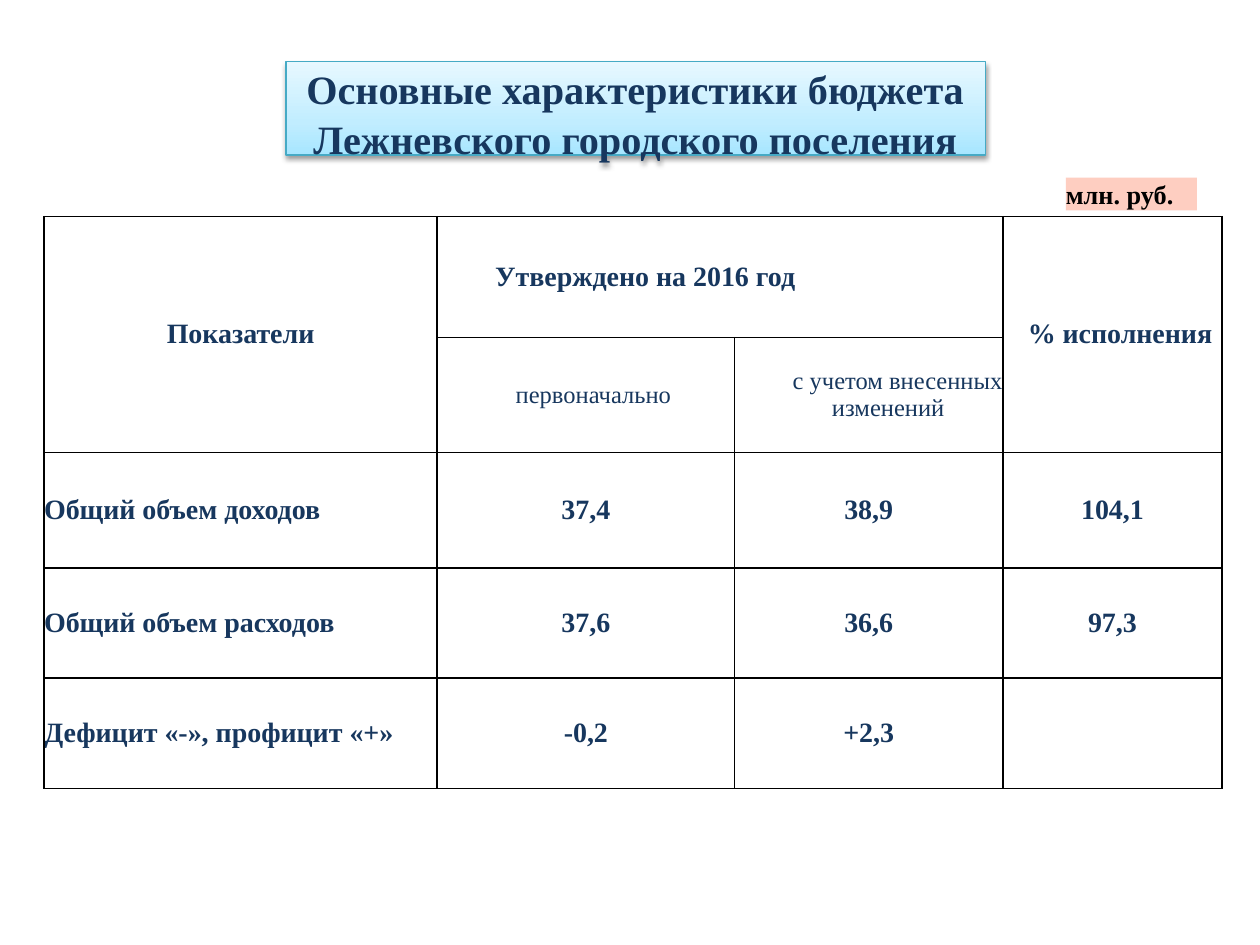
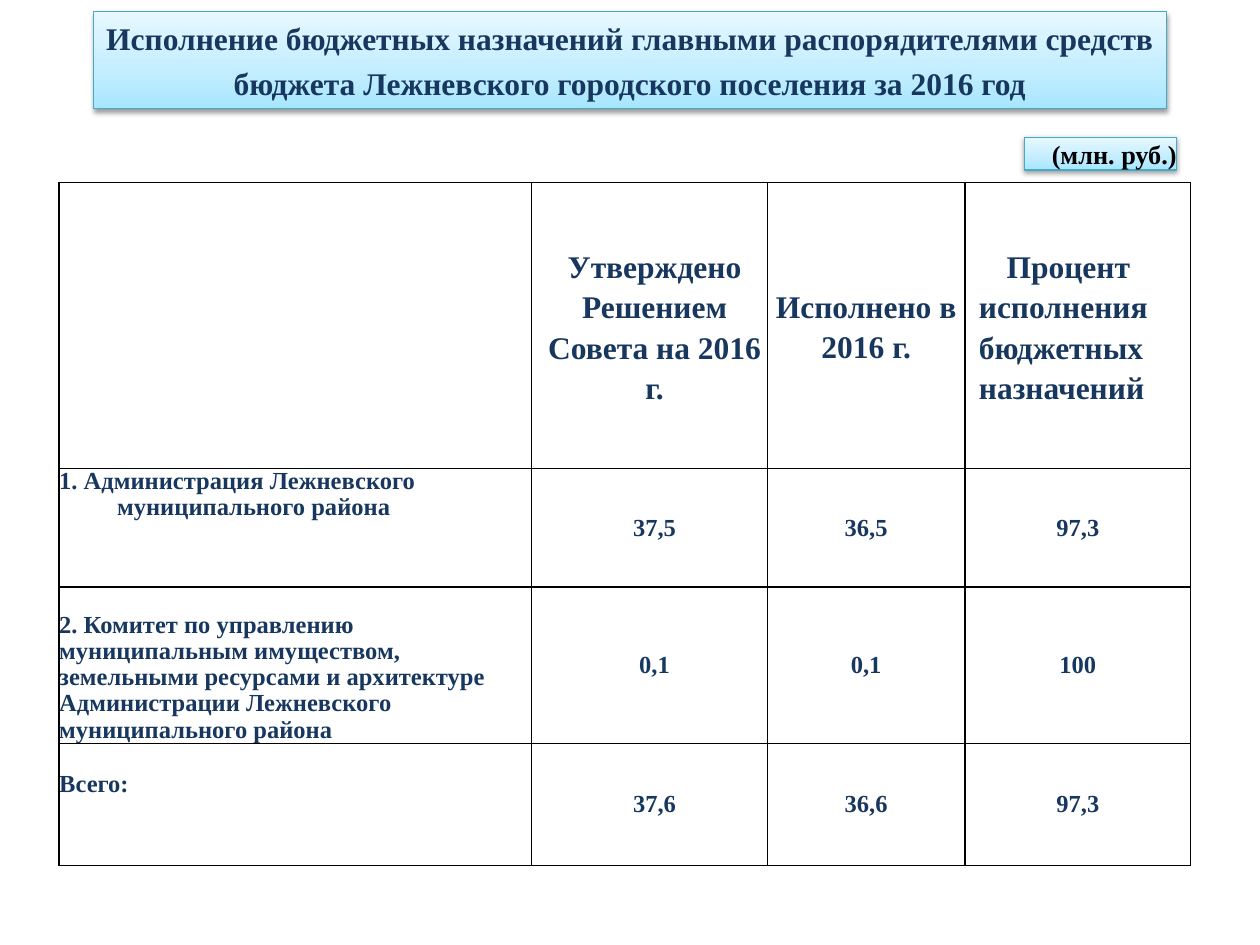
from lxml import etree
from pptx import Presentation
from pptx import util as u
from pptx.dml.color import RGBColor
from pptx.enum import shapes, text
from pptx.oxml.ns import qn

NAVY = RGBColor(0x17, 0x37, 0x5E)
BLACK = RGBColor(0, 0, 0)
PEACH = RGBColor(0xFE, 0xCE, 0xC1)
TEAL = RGBColor(0x46, 0xAA, 0xC5)
SKY_STOPS = [(0, RGBColor(0xA7, 0xE6, 0xFF)),
             (35, RGBColor(0xC1, 0xED, 0xFF)),
             (100, RGBColor(0xE7, 0xF8, 0xFF))]
FONT = "Times New Roman"
LEFT, CENTER, RIGHT = text.PP_ALIGN.LEFT, text.PP_ALIGN.CENTER, text.PP_ALIGN.RIGHT
TOP, MIDDLE, BOTTOM = (text.MSO_ANCHOR.TOP, text.MSO_ANCHOR.MIDDLE,
                       text.MSO_ANCHOR.BOTTOM)


def add_node(parent, tag, **attributes):
    node = etree.SubElement(parent, qn(tag))
    for key, value in attributes.items():
        node.set(key, str(value))
    return node


def write(paragraph, words, size, color=NAVY, bold=True, align=LEFT,
          leading=None, indent=(0, 0)):
    """Fill one paragraph; indent is (left margin, first line) in inches."""
    paragraph.alignment = align
    if leading:
        paragraph.line_spacing = u.Pt(leading)
    if any(indent):
        properties = paragraph._p.get_or_add_pPr()
        properties.set("marL", str(u.Inches(indent[0])))
        properties.set("indent", str(u.Inches(indent[1])))
    run = paragraph.add_run()
    run.text = words
    run.font.name = FONT
    run.font.size = u.Pt(size)
    run.font.bold = bold
    run.font.color.rgb = color


def clear_margins(holder):
    holder.margin_left = holder.margin_right = 0
    holder.margin_top = holder.margin_bottom = 0


def prepare_frame(shape, anchor):
    frame = shape.text_frame
    frame.word_wrap = True
    frame.auto_size = text.MSO_AUTO_SIZE.NONE
    frame.vertical_anchor = anchor
    clear_margins(frame)
    return frame.paragraphs[0]


def style_sky_panel(shape):
    """Sky gradient, thin teal outline and soft shadow below."""
    properties = shape._element.spPr
    gradient = add_node(properties, "a:gradFill", rotWithShape=1)
    stops = add_node(gradient, "a:gsLst")
    for percent, color in SKY_STOPS:
        stop = add_node(stops, "a:gs", pos=percent * 1000)
        add_node(stop, "a:srgbClr", val=color)
    add_node(gradient, "a:lin", ang=270 * 60000, scaled=0)
    shape.line.color.rgb = TEAL
    shape.line.width = u.Pt(0.75)
    effects = add_node(properties, "a:effectLst")
    shadow = add_node(effects, "a:outerShdw", blurRad=u.Pt(3.1), dist=u.Pt(1.6),
                      dir=90 * 60000, rotWithShape=0)
    add_node(add_node(shadow, "a:srgbClr", val=BLACK), "a:alpha", val=38000)


def add_title(slide, words, box, size, leading):
    title = slide.shapes.title
    title.left, title.top, title.width, title.height = map(u.Inches, box)
    style_sky_panel(title)
    write(prepare_frame(title, TOP), words, size, align=CENTER, leading=leading)


def add_unit_label(slide, words, box, align, flat_fill=None):
    label = slide.shapes.add_shape(shapes.MSO_SHAPE.RECTANGLE, *map(u.Inches, box))
    if flat_fill is None:
        style_sky_panel(label)
    else:
        label.shadow.inherit = False
        label.fill.solid()
        label.fill.fore_color.rgb = flat_fill
        label.line.fill.background()
    write(prepare_frame(label, MIDDLE), words, 15, BLACK, align=align)


def draw_borders(cell):
    properties = cell._tc.get_or_add_tcPr()
    for index, side in enumerate(("a:lnL", "a:lnR", "a:lnT", "a:lnB")):
        border = add_node(properties, side, w=u.Pt(1))
        add_node(add_node(border, "a:solidFill"), "a:srgbClr", val=BLACK)
        properties.insert(index, border)


def add_grid(slide, left, top, column_widths, row_heights):
    """Unfilled table with black rules and no cell margins."""
    grid = slide.shapes.add_table(
        len(row_heights), len(column_widths), u.Inches(left), u.Inches(top),
        u.Inches(sum(column_widths)), u.Inches(sum(row_heights))).table
    grid.first_row = grid.horz_banding = False
    for column, width in zip(grid.columns, column_widths):
        column.width = u.Inches(width)
    for row, height in zip(grid.rows, row_heights):
        row.height = u.Inches(height)
    for cell in grid.iter_cells():
        clear_margins(cell)
        cell.fill.background()
        draw_borders(cell)
    return grid


def fill_cell(cell, words, size, anchor=MIDDLE, **style):
    cell.vertical_anchor = anchor
    write(cell.text_frame.paragraphs[0], words, size, **style)


def fill_values(grid, first_row, rows, size, first_indent=(0, 0)):
    for r, values in enumerate(rows, first_row):
        for c, value in enumerate(values, 1):
            fill_cell(grid.cell(r, c), value, size, align=CENTER,
                      indent=first_indent if c == 1 else (0, 0))


def build_budget_summary(slide):
    add_title(slide, "Основные характеристики бюджета Лежневского городского поселения",
              (2.27, 0.49, 5.55, 0.74), 23, 28.8)
    add_unit_label(slide, "млн. руб.", (8.46, 1.41, 1.04, 0.26), LEFT, PEACH)
    grid = add_grid(slide, 0.35, 1.72, (3.12, 2.36, 2.13, 1.74),
                    (0.96, 0.91, 0.92, 0.87, 0.88))

    # Two-level header
    for first, last in (((0, 0), (1, 0)), ((0, 1), (0, 2)), ((0, 3), (1, 3))):
        grid.cell(*first).merge(grid.cell(*last))
    fill_cell(grid.cell(0, 0), "Показатели", 16, align=CENTER)
    fill_cell(grid.cell(0, 1), "Утверждено на 2016 год", 16, indent=(0.46, 0))
    fill_cell(grid.cell(0, 3), "% исполнения", 16, align=CENTER, indent=(0.12, 0))
    fill_cell(grid.cell(1, 1), "первоначально", 14, bold=False, align=CENTER,
              indent=(0.12, 0))
    fill_cell(grid.cell(1, 2), "с учетом внесенных изменений", 14, bold=False,
              align=CENTER, indent=(0.31, 0.15))

    # Indicators
    indicators = ("Общий объем доходов", "Общий объем расходов",
                  "Дефицит «-», профицит «+»")
    for r, indicator in enumerate(indicators, 2):
        fill_cell(grid.cell(r, 0), indicator, 16)
    fill_values(grid, 2, [("37,4", "38,9", "104,1"),
                          ("37,6", "36,6", "97,3"),
                          ("-0,2", "+2,3")], 16)


def build_spending_by_manager(slide):
    add_title(slide, "Исполнение бюджетных назначений главными распорядителями средств "
              "бюджета Лежневского городского поселения за 2016 год",
              (0.74, 0.09, 8.52, 0.77), 18, 25.9)
    add_unit_label(slide, "(млн. руб.)", (8.13, 1.09, 1.21, 0.26), RIGHT)
    grid = add_grid(slide, 0.47, 1.45, (3.75, 1.87, 1.57, 1.79),
                    (2.27, 0.94, 1.24, 0.97))

    # Header
    fill_cell(grid.cell(0, 1), "Утверждено Решением Совета на 2016 г.", 18,
              align=CENTER, leading=23, indent=(0.08, 0))
    fill_cell(grid.cell(0, 2), "Исполнено в 2016 г.", 18, align=CENTER, leading=22.8)
    percent = grid.cell(0, 3)
    fill_cell(percent, "Процент", 18, leading=23, indent=(0.33, 0))
    for word in ("исполнения", "бюджетных", "назначений"):
        write(percent.text_frame.add_paragraph(), word, 18, leading=23,
              indent=(0.11, 0))

    # Budget managers
    fill_cell(grid.cell(1, 0), "1. Администрация Лежневского муниципального района",
              14, TOP, leading=15, indent=(0.46, -0.46))
    fill_cell(grid.cell(2, 0), "2. Комитет по управлению муниципальным имуществом, "
              "земельными ресурсами и архитектуре Администрации Лежневского "
              "муниципального района", 14, BOTTOM, leading=15)
    total = grid.cell(3, 0)
    total.margin_top = u.Inches(0.22)
    fill_cell(total, "Всего:", 14, TOP)
    fill_values(grid, 1, [("37,5", "36,5", "97,3"),
                          ("0,1", "0,1", "100"),
                          ("37,6", "36,6", "97,3")], 14, first_indent=(0.08, 0))


def main():
    deck = Presentation()
    deck.slide_width, deck.slide_height = u.Inches(10), u.Inches(7.5)
    title_only = deck.slide_layouts[5]
    for build in (build_budget_summary, build_spending_by_manager):
        build(deck.slides.add_slide(title_only))
    deck.save("out.pptx")


if __name__ == "__main__":
    main()
